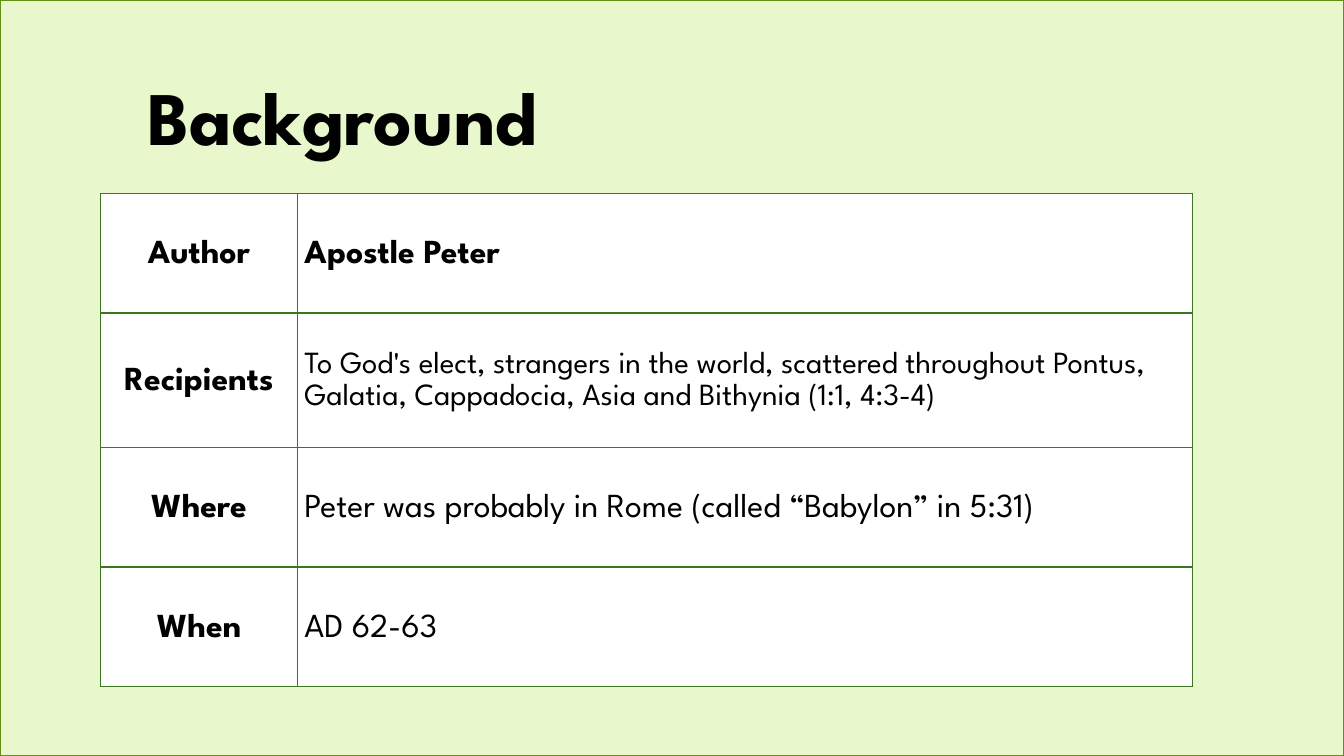
from lxml.etree import SubElement
from pptx import Presentation
from pptx.dml.color import RGBColor
from pptx.enum.shapes import MSO_SHAPE
from pptx.enum.text import MSO_ANCHOR, MSO_AUTO_SIZE, PP_ALIGN
from pptx.oxml.ns import qn
from pptx.util import Emu, Pt

PX = 9525
COLORS = {
    "ground": "E9F8CC",
    "frame": "658E15",
    "grid": "3E7520",
    "cell": "FFFFFF",
    "ink": "000000",
}
FONT = "League Spartan"
TITLE_ONLY = 5
COLUMN_WIDTHS = [187, 853]
ROW_HEIGHTS = [114, 128, 114, 114]
# label, answer, answer format, answer alignment
FACTS = [
    ("Author", "Apostle Peter", {"size": 24, "bold": True}, PP_ALIGN.JUSTIFY),
    ("Recipients",
     "To God's elect, strangers in the world, scattered throughout Pontus, "
     "Galatia, Cappadocia, Asia and Bithynia (1:1, 4:3-4)",
     {"size": 22, "bold": False}, PP_ALIGN.LEFT),
    ("Where", "Peter was probably in Rome (called “Babylon” in 5:31)",
     {"size": 24, "bold": False}, PP_ALIGN.JUSTIFY),
    ("When", "AD 62-63", {"size": 24, "bold": False}, PP_ALIGN.JUSTIFY),
]


def px(count):
    return Emu(count * PX)


def rgb(name):
    return RGBColor.from_string(COLORS[name])


def apply(target, values):
    for name, value in values.items():
        setattr(target, name, value)


class SlideBuilder:
    def __init__(self, slide):
        self.slide = slide

    def add_text(self, frame, text, size, bold, **paragraph_format):
        paragraph = frame.paragraphs[0]
        apply(paragraph, paragraph_format)
        run = paragraph.add_run()
        run.text = text
        apply(run.font, {"name": FONT, "size": Pt(size), "bold": bold})
        run.font.color.rgb = rgb("ink")

    def background(self, width, height):
        ground = self.slide.shapes.add_shape(
            MSO_SHAPE.RECTANGLE, 0, 0, px(width), px(height))
        ground.shadow.inherit = False
        ground.fill.solid()
        ground.fill.fore_color.rgb = rgb("ground")
        ground.line.color.rgb = rgb("frame")
        ground.line.width = Pt(0.85)

    def title(self, text, left, top, width, height):
        """Format the title placeholder and bring it above the background."""
        heading = self.slide.shapes.title
        self.slide.shapes.element.append(heading.element)
        apply(heading, {"left": px(left), "top": px(top),
                        "width": px(width), "height": px(height)})
        apply(heading.text_frame, {
            "margin_left": px(12), "margin_right": px(12),
            "margin_top": px(7), "margin_bottom": px(7),
            "vertical_anchor": MSO_ANCHOR.BOTTOM,
            "word_wrap": True, "auto_size": MSO_AUTO_SIZE.NONE})
        self.add_text(heading.text_frame, text, 54, True,
                      alignment=PP_ALIGN.LEFT)

    def borders(self, cell, widths):
        properties = cell._tc.get_or_add_tcPr()
        for side, width in widths.items():
            line = SubElement(properties, qn(f"a:ln{side}"), w=str(Pt(width)))
            fill = SubElement(line, qn("a:solidFill"))
            SubElement(fill, qn("a:srgbClr"), val=COLORS["grid"])

    def fact_cell(self, cell, text, text_format, alignment, widths):
        apply(cell, {"margin_left": px(7), "margin_right": px(7),
                     "margin_top": 0, "margin_bottom": 0,
                     "vertical_anchor": MSO_ANCHOR.MIDDLE})
        self.borders(cell, widths)
        cell.fill.solid()
        cell.fill.fore_color.rgb = rgb("cell")
        self.add_text(cell.text_frame, text, **text_format,
                      alignment=alignment, line_spacing=1.15, space_after=Pt(6))

    def fact_table(self, left, top):
        table = self.slide.shapes.add_table(
            len(FACTS), len(COLUMN_WIDTHS), px(left), px(top),
            px(sum(COLUMN_WIDTHS)), px(sum(ROW_HEIGHTS))).table
        apply(table, {"first_row": False, "horz_banding": False})
        for column, width in zip(table.columns, COLUMN_WIDTHS):
            column.width = px(width)
        for row, height in zip(table.rows, ROW_HEIGHTS):
            row.height = px(height)
        for index, (label, answer, answer_format, alignment) in enumerate(FACTS):
            widths = {"L": 1, "R": 1, "T": 2 if index == 1 else 1,
                      "B": 2 if index == 0 else 1}
            self.fact_cell(table.cell(index, 0), label,
                           {"size": 24, "bold": True}, PP_ALIGN.CENTER, widths)
            self.fact_cell(table.cell(index, 1), answer,
                           answer_format, alignment, widths)


def main():
    deck = Presentation()
    apply(deck, {"slide_width": px(1280), "slide_height": px(720)})
    builder = SlideBuilder(deck.slides.add_slide(deck.slide_layouts[TITLE_ONLY]))
    builder.background(1280, 720)
    builder.title("Background", 128, 24, 1023, 136)
    builder.fact_table(96, 184)
    deck.save("out.pptx")


if __name__ == "__main__":
    main()
